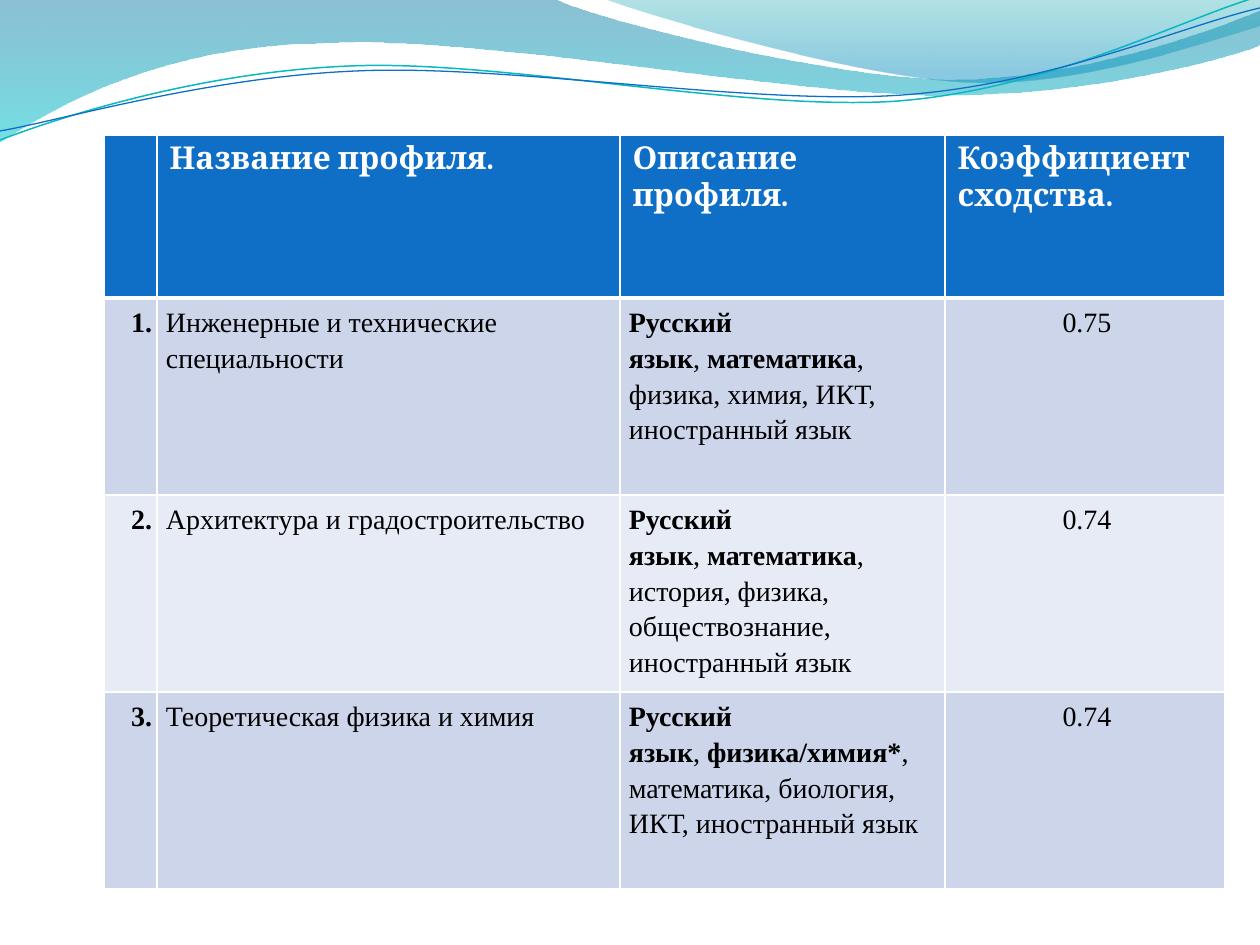
"""Build a slide with a table of study profiles under a wave header."""
import pptx
import pptx.dml.color
import pptx.enum.text
import pptx.oxml
import pptx.oxml.ns
import pptx.util

PX = 914400 / 126
NBSP = chr(160)
COLORS = {
    "white": "FFFFFF", "black": "000000", "blue": "0F6FC6", "teal": "0AB8BF",
    "band": "CCD5EA", "light band": "E7EBF5",
    "wave top": "0074A1", "wave bottom": "00C6CF",
    "crest top": "00A1A9", "crest bottom": "008BBF",
}
ALIGN = pptx.enum.text.PP_ALIGN
qn = pptx.oxml.ns.qn


def rgb(name):
    return pptx.dml.color.RGBColor.from_string(COLORS[name])


def add_outline(slide, start, segments, closed):
    builder = slide.shapes.build_freeform(*start, scale=PX)
    points = [pair for segment in segments for pair in zip(segment[::2], segment[1::2])]
    builder.add_line_segments(points, close=closed)
    shape = builder.convert_to_shape()
    shape.shadow.inherit = False
    lines = iter(list(shape._element.iter(qn("a:lnTo"))))
    for segment in segments:
        line = next(lines)
        if len(segment) == 6:
            curve = line.makeelement(qn("a:cubicBezTo"), {})
            line.addprevious(curve)
            for part in (line, next(lines), next(lines)):
                curve.append(part[0])
                part.getparent().remove(part)
    return shape


presentation = pptx.Presentation()
presentation.slide_width = pptx.util.Emu(round(1260 * PX))
presentation.slide_height = pptx.util.Emu(round(945 * PX))
slide = presentation.slides.add_slide(presentation.slide_layouts[6])

waves = [
    ((0, 0), [(554, -1), (600, 21, 837, 79, 955, 79), (1075, 79, 1207, 33, 1260, 11),
              (1261, 45), (1239, 55, 1096, 96, 940, 95), (784, 95, 481, 35, 324, 43),
              (163, 45, 58, 105, -1, 142), (0, 0)],
     [("wave top", 0, 45), ("wave bottom", 1, 55)]),
    ((604, -1), [(641, 14, 859, 78, 969, 82), (1079, 87, 1211, 40, 1260, 26),
                 (1260, 0), (604, -1)],
     [("crest top", 0, 30), ("crest bottom", 0.8, 45)]),
]
for start, segments, stops in waves:
    wave = add_outline(slide, start, segments, True)
    wave.line.fill.background()
    wave.fill.gradient()
    wave.fill.gradient_angle = 270
    for stop, (color, position, opacity) in zip(wave.fill.gradient_stops, stops):
        stop.color.rgb = rgb(color)
        stop.position = position
    for element, (color, position, opacity) in zip(wave._element.spPr.iter(qn("a:srgbClr")), stops):
        element.append(element.makeelement(qn("a:alpha"), {"val": str(opacity * 1000)}))

strands = [
    ((0, 140), [(60, 117, 199, 72, 349, 66), (498, 59, 747, 112, 898, 101),
                (1050, 89, 1182, 19, 1257, -3)], "teal", 0.85),
    ((0, 131), [(59, 121, 207, 77, 357, 71), (508, 64, 752, 106, 903, 95),
                (1053, 84, 1182, 26, 1260, 8)], "blue", 0.75),
]
for start, segments, color, width in strands:
    strand = add_outline(slide, start, segments, False)
    strand.fill.background()
    strand.line.color.rgb = rgb(color)
    strand.line.width = pptx.util.Pt(width)

headers = ["", "Название профиля.", "Описание профиля.", "Коэффициент сходства."]
profiles = [
    ("Инженерные и технические специальности", "математика",
     ", физика, химия, ИКТ, иностранный язык", "0.75"),
    ("Архитектура и градостроительство", "математика",
     ", история, физика, обществознание, иностранный язык", "0.74"),
    ("Теоретическая физика и химия", "физика/химия*",
     ", математика, биология, ИКТ, иностранный язык", "0.74"),
]
rows = [[[header] for header in headers]]
for number, (title, subject, others, score) in enumerate(profiles, 1):
    rows.append([[f"{number}."], [title],
                 ["Русский язык", "," + NBSP, subject, others], [score]])

column_widths = [53, 463, 325, 280]
row_heights = [163, 197, 197, 197]
frame = [round(value * PX) for value in (104, 135, sum(column_widths), sum(row_heights))]
table = slide.shapes.add_table(len(rows), len(headers), *frame).table
for column, width in zip(table.columns, column_widths):
    column.width = round(width * PX)
for row, height in zip(table.rows, row_heights):
    row.height = round(height * PX)

alignments = [ALIGN.RIGHT, ALIGN.LEFT, ALIGN.LEFT, ALIGN.CENTER]
fills = ["blue", "band", "light band", "band"]
for row_index, row in enumerate(rows):
    is_header = row_index == 0
    for column_index, texts in enumerate(row):
        cell = table.cell(row_index, column_index)
        cell.fill.solid()
        cell.fill.fore_color.rgb = rgb(fills[row_index])
        paragraph = cell.text_frame.paragraphs[0]
        paragraph.font.name = "Cambria" if is_header else "Times New Roman"
        paragraph.font.size = pptx.util.Pt(18 if is_header else 16)
        paragraph.font.color.rgb = rgb("white" if is_header else "black")
        if not is_header:
            cell.margin_left = round(9 * PX)
            cell.margin_top = cell.margin_right = cell.margin_bottom = round(5 * PX)
            paragraph.alignment = alignments[column_index]
            paragraph.line_spacing = 1.15
        if len(texts) == 1:
            paragraph.font.bold = is_header or column_index == 0
        for text_index, text in enumerate(texts):
            if text:
                run = paragraph.add_run()
                run.text = text
                if len(texts) > 1:
                    run.font.bold = text_index % 2 == 0
        properties = cell._tc.get_or_add_tcPr()
        for side_index, side in enumerate("LRTB"):
            heavy = (is_header and side == "B") or (row_index == 1 and side == "T")
            border = pptx.oxml.parse_xml(
                f'<a:ln{side} {pptx.oxml.ns.nsdecls("a")} w="{38100 if heavy else 12700}">'
                f'<a:solidFill><a:srgbClr val="{COLORS["white"]}"/></a:solidFill></a:ln{side}>')
            properties.insert(side_index, border)

presentation.save("out.pptx")
